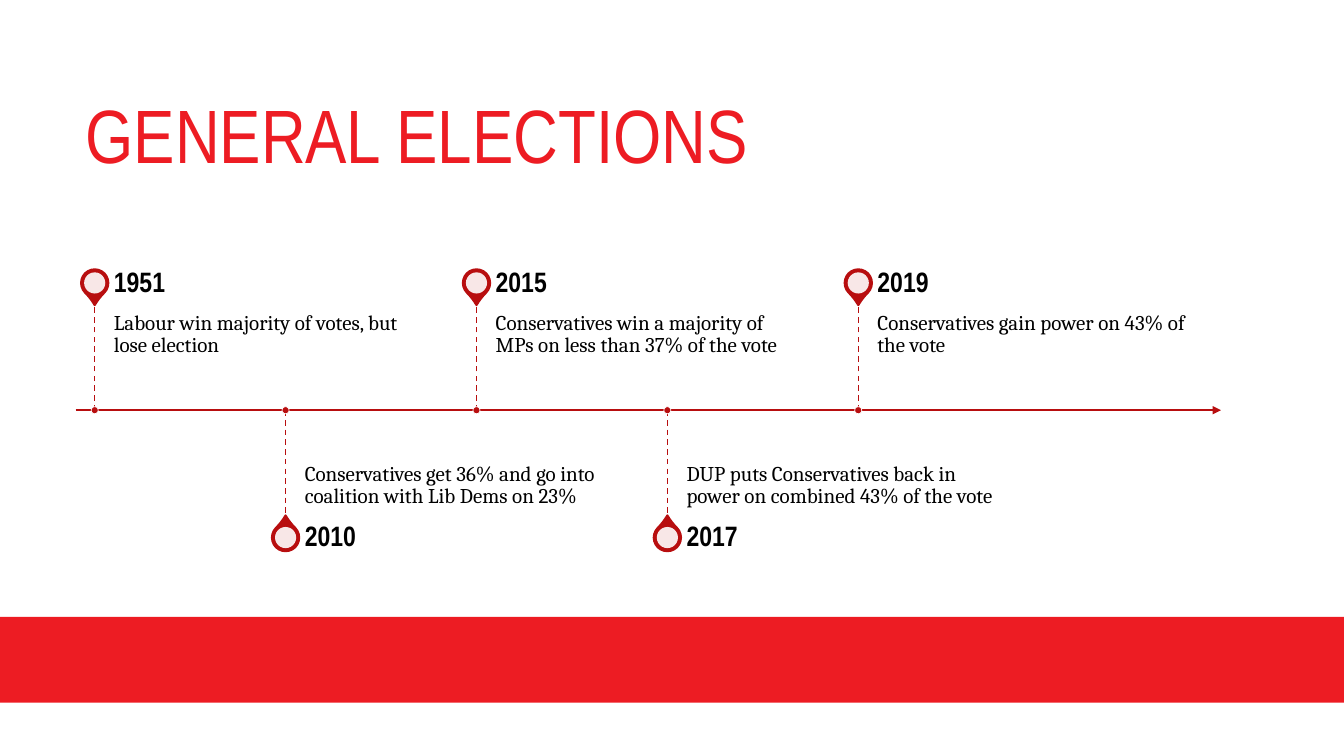
import dataclasses

import pptx
import pptx.dml.color
import pptx.enum.dml
import pptx.enum.shapes
import pptx.enum.text
import pptx.oxml
import pptx.oxml.ns
import pptx.util

Inches = pptx.util.Inches
Shape = pptx.enum.shapes.MSO_SHAPE
Anchor = pptx.enum.text.MSO_ANCHOR


@dataclasses.dataclass(frozen=True)
class Theme:
    brand: str = "ED1C23"
    accent: str = "B80E0F"
    paper: str = "FFFFFF"
    ink: str = "000000"
    heading_font: str = "Arial Narrow"
    body_font: str = "Cambria"
    title_size: int = 54
    year_size: int = 20
    body_size: int = 15


THEME = Theme()
SLIDE_WIDTH, SLIDE_HEIGHT = 13.33, 7.5
TIMELINE_COLUMNS = 6
EVENTS = [
    ("1951", "Labour win majority of votes, but lose election"),
    ("2010", "Conservatives get 36% and go into coalition with Lib Dems on 23%"),
    ("2015", "Conservatives win a majority of MPs on less than 37% of the vote"),
    ("2017", "DUP puts Conservatives back in power on combined 43% of the vote"),
    ("2019", "Conservatives gain power on 43% of the vote"),
]


def rgb(color):
    return pptx.dml.color.RGBColor.from_string(color)


def add_child(parent, tag, **attributes):
    child = parent.makeelement(pptx.oxml.ns.qn(tag), attributes)
    parent.append(child)
    return child


def add_filled(page, kind, box, fill, line=None, line_width=0):
    shape = page.shapes.add_shape(kind, *map(Inches, box))
    shape.shadow.inherit = False
    shape.fill.solid()
    shape.fill.fore_color.rgb = rgb(fill)
    if line:
        shape.line.color.rgb = rgb(line)
        shape.line.width = pptx.util.Pt(line_width)
    else:
        shape.line.fill.background()
    return shape


def add_disc(page, center_x, center_y, size, kind=Shape.OVAL, **look):
    """Centre a round shape on a point."""
    box = (center_x - size / 2, center_y - size / 2, size, size)
    return add_filled(page, kind, box, **look)


def add_line(page, start, end, width):
    line = page.shapes.add_connector(
        pptx.enum.shapes.MSO_CONNECTOR.STRAIGHT, *map(Inches, start + end))
    line.line.color.rgb = rgb(THEME.accent)
    line.line.width = pptx.util.Pt(width)
    add_child(line._element.spPr, "a:effectLst")
    return line


def add_text(page, box, text, font, size, color, anchor, insets, bold=False):
    frame = page.shapes.add_textbox(*map(Inches, box)).text_frame
    frame.word_wrap = True
    frame.vertical_anchor = anchor
    (frame.margin_left, frame.margin_top,
     frame.margin_right, frame.margin_bottom) = map(Inches, insets)
    para = frame.paragraphs[0]
    para.line_spacing = 0.9
    span = para.add_run()
    span.text = text
    span.font.name = font
    span.font.size = pptx.util.Pt(size)
    span.font.bold = bold
    span.font.color.rgb = rgb(color)


def add_title(page, box, text):
    add_text(page, box, text, THEME.heading_font, THEME.title_size,
             THEME.brand, Anchor.MIDDLE, (0.1, 0.05, 0.1, 0.05))


def add_pin(page, x, y, above):
    """Draw a map pin whose tip points at the axis."""
    drop = add_disc(page, x, y, 0.27, Shape.TEAR, fill=THEME.accent,
                    line=THEME.accent, line_width=1.5)
    drop.adjustments[0] = 1.15
    drop.rotation = 135 if above else 315
    eye = add_disc(page, x, y, 0.21, fill=THEME.paper)
    color = eye._element.spPr.find(".//" + pptx.oxml.ns.qn("a:srgbClr"))
    add_child(color, "a:alpha", val="90000")


def add_event(page, x, axis_y, reach, year, summary, above):
    """Place one event; reach is the distance from axis to year label."""
    text_left, text_width, year_height = x + 0.19, 3.15, 0.38
    direction = -1 if above else 1
    stem_end = axis_y + direction * reach
    year_middle = stem_end + direction * year_height / 2

    add_pin(page, x, year_middle, above)
    add_text(page, (text_left, min(axis_y, stem_end), text_width, reach), summary,
             THEME.body_font, THEME.body_size, THEME.ink,
             Anchor.TOP if above else Anchor.BOTTOM,
             (0, 0.1, 0.1, 0.16) if above else (0, 0.16, 0, 0.1))
    add_text(page, (text_left, year_middle - year_height / 2, text_width, year_height),
             year, THEME.heading_font, THEME.year_size, THEME.ink,
             Anchor.MIDDLE, (0, 0, 0.14, 0), bold=True)
    stem = add_line(page, (x, axis_y), (x, stem_end), 1)
    stem.line.dash_style = pptx.enum.dml.MSO_LINE.DASH
    add_disc(page, x, axis_y, 0.07, fill=THEME.accent, line=THEME.paper, line_width=0.5)


def add_timeline(page, box, events):
    left, top, width, height = box
    axis_y = top + height / 2
    column = width / TIMELINE_COLUMNS
    axis = add_line(page, (left, axis_y), (left + width, axis_y), 1.5)
    add_child(axis.line._get_or_add_ln(), "a:tailEnd", type="triangle")
    for index, (year, summary) in enumerate(events):
        add_event(page, left + 0.1 * column + index * column, axis_y,
                  0.37 * height, year, summary, above=index % 2 == 0)


def main():
    deck = pptx.Presentation()
    deck.slide_width, deck.slide_height = Inches(SLIDE_WIDTH), Inches(SLIDE_HEIGHT)
    page = deck.slides.add_slide(deck.slide_layouts[6])
    page.background.fill.solid()
    page.background.fill.fore_color.rgb = rgb(THEME.paper)
    add_filled(page, Shape.RECTANGLE, (0, 6.12, SLIDE_WIDTH, 0.85), THEME.brand)
    add_title(page, (0.75, 0.75, 9.13, 1.26), "GENERAL ELECTIONS")
    add_timeline(page, (0.75, 2.62, 11.36, 2.9), EVENTS)
    deck.save("out.pptx")


if __name__ == "__main__":
    main()
